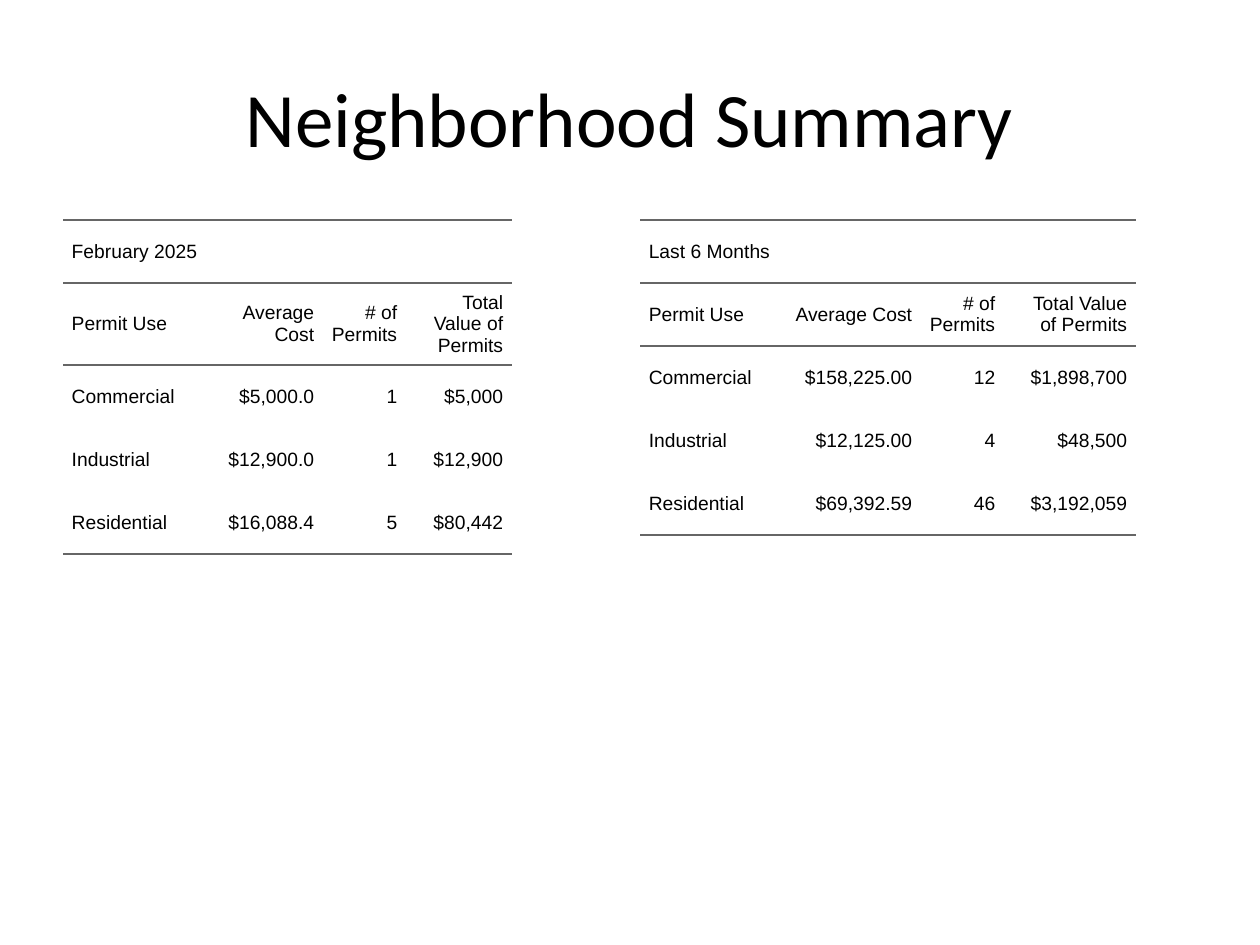
from lxml.etree import SubElement
from pptx import Presentation
from pptx.dml.color import RGBColor
from pptx.enum.text import MSO_ANCHOR as Anchor, PP_ALIGN as Align
from pptx.oxml import parse_xml
from pptx.oxml.ns import nsdecls, qn
from pptx.util import Emu, Pt

PX = 914400 / 126
PADDING = Pt(5)
RULE_COLOUR = "666666"
TEXT_COLOUR = "000000"
RULED_EDGES = {0, 1, 2, 5}
ROW_HEIGHT = 63
HEADINGS = ["Permit Use", "Average Cost", "# of Permits", "Total Value of Permits"]
CELL_FORMAT = {
    "vertical_anchor": Anchor.MIDDLE,
    "margin_left": 0,
    "margin_right": 0,
    "margin_top": PADDING,
    "margin_bottom": PADDING,
}
TABLE_FLAGS = {"first_row": False, "horz_banding": False}
SUMMARIES = [
    {
        "period": "February 2025",
        "left": 63,
        "columns": [139, 121, 83, 106],
        "permits": [
            ["Commercial", "$5,000.0", "1", "$5,000"],
            ["Industrial", "$12,900.0", "1", "$12,900"],
            ["Residential", "$16,088.4", "5", "$80,442"],
        ],
    },
    {
        "period": "Last 6 Months",
        "left": 640,
        "columns": [139, 142, 83, 132],
        "permits": [
            ["Commercial", "$158,225.00", "12", "$1,898,700"],
            ["Industrial", "$12,125.00", "4", "$48,500"],
            ["Residential", "$69,392.59", "46", "$3,192,059"],
        ],
    },
]


def px(length):
    return Emu(round(length * PX))


def colour(hex_value):
    return RGBColor.from_string(hex_value)


def apply_format(target, values):
    for name, value in values.items():
        setattr(target, name, value)


def write(paragraph, text, align, font_name, size):
    paragraph.alignment = align
    run = paragraph.add_run()
    run.text = text
    apply_format(run.font, {"name": font_name, "size": Pt(size)})
    run.font.color.rgb = colour(TEXT_COLOUR)


def add_title(slide, text):
    title = slide.shapes.title
    apply_format(title, {"left": px(63), "top": px(38), "width": px(1134), "height": px(158)})
    title.text_frame.vertical_anchor = Anchor.MIDDLE
    write(title.text_frame.paragraphs[0], text, Align.CENTER, "Calibri", 44)


def set_borders(cell, row):
    ruled = {"lnL": False, "lnR": False, "lnT": row in RULED_EDGES, "lnB": row + 1 in RULED_EDGES}
    properties = cell._tc.get_or_add_tcPr()
    for position, (side, visible) in enumerate(ruled.items()):
        border = parse_xml(f'<a:{side} {nsdecls("a")} w="{Pt(1.5)}"/>')
        if visible:
            fill = SubElement(border, qn("a:solidFill"))
            SubElement(fill, qn("a:srgbClr"), val=RULE_COLOUR)
        else:
            SubElement(border, qn("a:noFill"))
        properties.insert(position, border)


def fill_cell(cell, text, align):
    paragraph = cell.text_frame.paragraphs[0]
    apply_format(paragraph, {"space_before": Pt(5), "space_after": Pt(5)})
    indents = paragraph._p.get_or_add_pPr()
    for side in ("marL", "marR"):
        indents.set(side, str(PADDING))
    write(paragraph, text, align, "Arial", 11)


def add_summary(slide, period, left, columns, permits):
    rows = [[period], HEADINGS, *permits]
    frame = slide.shapes.add_table(
        len(rows), len(columns), px(left), px(220), px(557), px(624)
    )
    table = frame.table
    apply_format(table, TABLE_FLAGS)
    for column, width in zip(table.columns, columns):
        column.width = px(width)
    for row in table.rows:
        row.height = px(ROW_HEIGHT)
    apply_format(frame, {"width": px(557), "height": px(624)})
    table.cell(0, 0).merge(table.cell(0, len(columns) - 1))
    for r, texts in enumerate(rows):
        for c in range(len(columns)):
            cell = table.cell(r, c)
            apply_format(cell, CELL_FORMAT)
            cell.fill.background()
            set_borders(cell, r)
        for c, text in enumerate(texts):
            fill_cell(table.cell(r, c), text, Align.RIGHT if c else Align.LEFT)


def main():
    deck = Presentation()
    apply_format(deck, {"slide_width": px(1260), "slide_height": px(945)})
    slide = deck.slides.add_slide(deck.slide_layouts[5])
    add_title(slide, "Neighborhood Summary")
    for summary in SUMMARIES:
        add_summary(slide, **summary)
    deck.save("out.pptx")


if __name__ == "__main__":
    main()
